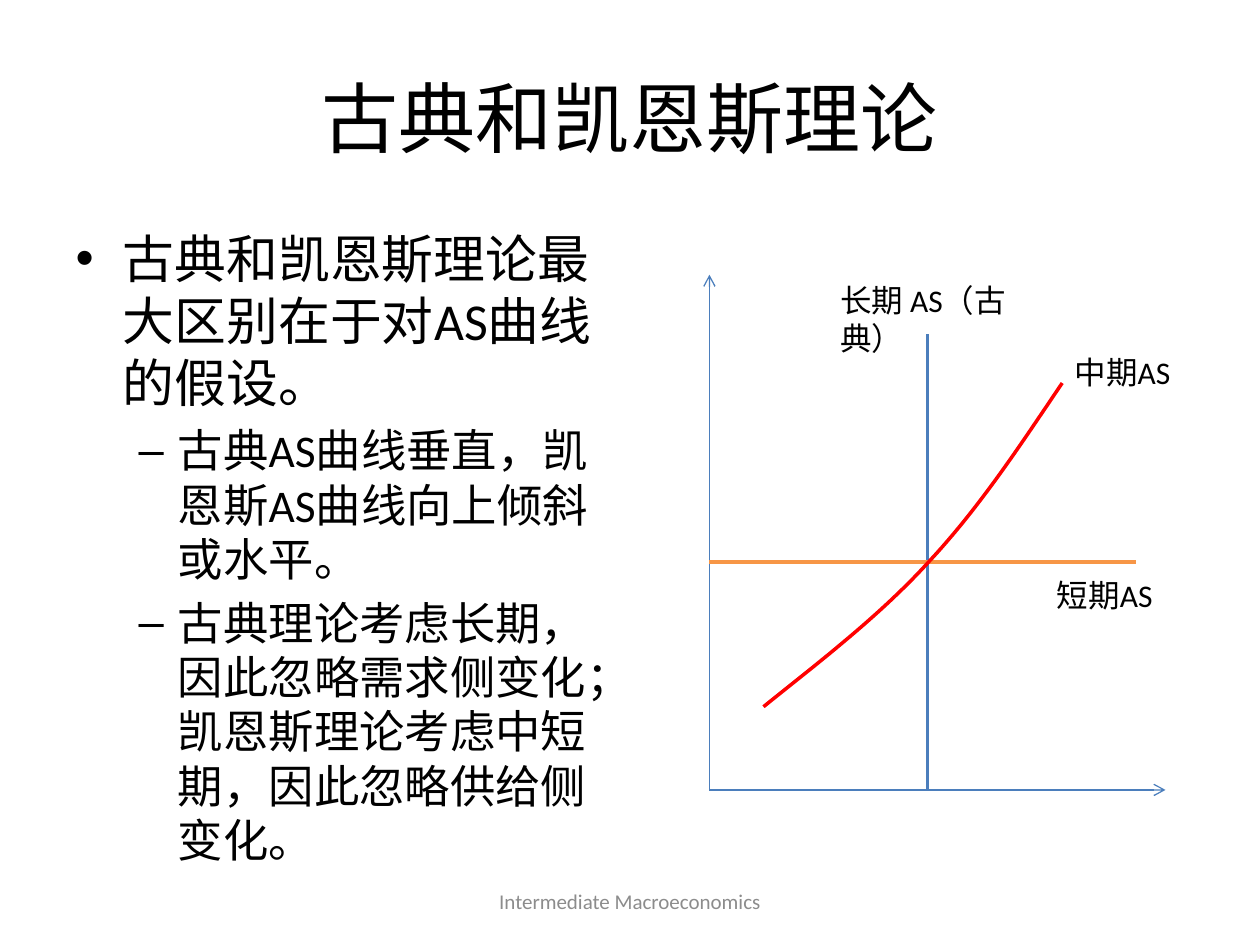
from lxml import etree
from pptx import Presentation
from pptx.dml.color import RGBColor
from pptx.enum.shapes import MSO_CONNECTOR
from pptx.enum.text import MSO_ANCHOR, MSO_AUTO_SIZE, PP_ALIGN
from pptx.oxml.ns import qn
from pptx.util import Pt

FONT = "Calibri"
BLACK, GREY = "000000", "8C8C8C"
BLUE, ORANGE, RED = "4B7EBC", "F79646", "FF0000"

TITLE = "古典和凯恩斯理论"
POINTS = [
    (0, "古典和凯恩斯理论最大区别在于对AS曲线的假设。"),
    (1, "古典AS曲线垂直，凯恩斯AS曲线向上倾斜或水平。"),
    (1, "古典理论考虑长期，因此忽略需求侧变化；凯恩斯理论考虑中短期，因此忽略供给侧变化。"),
]
LEVEL_SIZES = [29.6, 25.9]

# Diagram geometry in points
ORIGIN_X, ORIGIN_Y = 405.4, 451.4
MEDIUM_RUN_START = (436.3, 403.9)
MEDIUM_RUN_CURVES = [
    ((469.4, 377.3), (503.3, 351.4), (531.4, 320.4)),
    ((560.2, 289.4), (583.2, 254.2), (607, 218.9)),
]


def rgb(hex_colour):
    return RGBColor.from_string(hex_colour)


def style_runs(paragraph, size, colour=BLACK):
    for run in paragraph.runs:
        run.font.name = FONT
        run.font.size = Pt(size)
        run.font.color.rgb = rgb(colour)


def place(shape, left, top, width, height):
    shape.left, shape.top = Pt(left), Pt(top)
    shape.width, shape.height = Pt(width), Pt(height)


def fill_title(title):
    place(title, 36, 21.6, 648, 90)
    title.text_frame.text = TITLE
    style_runs(title.text_frame.paragraphs[0], 44)


def fill_body(body):
    place(body, 36, 126, 318.2, 356.4)
    frame = body.text_frame
    frame.auto_size = MSO_AUTO_SIZE.NONE
    frame.text = "\n".join(text for _, text in POINTS)
    for paragraph, (level, _) in zip(frame.paragraphs, POINTS):
        paragraph.level = level
        style_runs(paragraph, LEVEL_SIZES[level])


def add_label(slide, text, left, top, width, size=18, colour=BLACK):
    label = slide.shapes.add_textbox(Pt(left), Pt(top), Pt(width), Pt(28.8))
    frame = label.text_frame
    frame.word_wrap = True
    frame.text = text
    style_runs(frame.paragraphs[0], size, colour)
    return frame


def add_line(slide, start, end, colour, width, arrow=False):
    line = slide.shapes.add_connector(
        MSO_CONNECTOR.STRAIGHT, *(Pt(value) for value in start + end))
    line.line.color.rgb = rgb(colour)
    line.line.width = Pt(width)
    if arrow:
        etree.SubElement(line.line._get_or_add_ln(), qn("a:tailEnd"), type="arrow")
    etree.SubElement(line._element.spPr, qn("a:effectLst"))


def bezier_points(start, curves, steps=24):
    for c1, c2, end in curves:
        for step in range(1, steps + 1):
            t = step / steps
            u = 1 - t
            yield tuple(
                Pt(u**3 * a + 3 * u**2 * t * b + 3 * u * t**2 * c + t**3 * d)
                for a, b, c, d in zip(start, c1, c2, end))
        start = end


def add_curve(slide, start, curves, colour, width):
    builder = slide.shapes.build_freeform(Pt(start[0]), Pt(start[1]))
    builder.add_line_segments(bezier_points(start, curves), close=False)
    curve = builder.convert_to_shape()
    curve.shadow.inherit = False
    curve.fill.background()
    curve.line.color.rgb = rgb(colour)
    curve.line.width = Pt(width)


def main():
    prs = Presentation()
    prs.slide_width, prs.slide_height = Pt(720), Pt(540)
    slide = prs.slides.add_slide(prs.slide_layouts[1])

    # Title, bullets and footer
    fill_title(slide.shapes.title)
    fill_body(slide.placeholders[1])
    footer = add_label(slide, "Intermediate Macroeconomics", 246, 500.5, 228, 12, GREY)
    footer.vertical_anchor = MSO_ANCHOR.MIDDLE
    footer.paragraphs[0].alignment = PP_ALIGN.CENTER

    # Axes
    origin = (ORIGIN_X, ORIGIN_Y)
    add_line(slide, origin, (666, ORIGIN_Y), BLUE, 0.75, arrow=True)
    add_line(slide, origin, (ORIGIN_X, 157), BLUE, 0.75, arrow=True)

    # Long-, short- and medium-run supply
    add_line(slide, (530, ORIGIN_Y), (530, 190.8), BLUE, 2)
    add_line(slide, (ORIGIN_X, 321.1), (649.4, 321.1), ORANGE, 2)
    add_curve(slide, MEDIUM_RUN_START, MEDIUM_RUN_CURVES, RED, 2)

    # Curve labels
    add_label(slide, "长期 AS（古典）", 473, 157, 133.9)
    add_label(slide, "短期AS", 596.9, 325.4, 130.3)
    add_label(slide, "中期AS", 607, 198, 121.7)

    prs.save("out.pptx")


if __name__ == "__main__":
    main()
